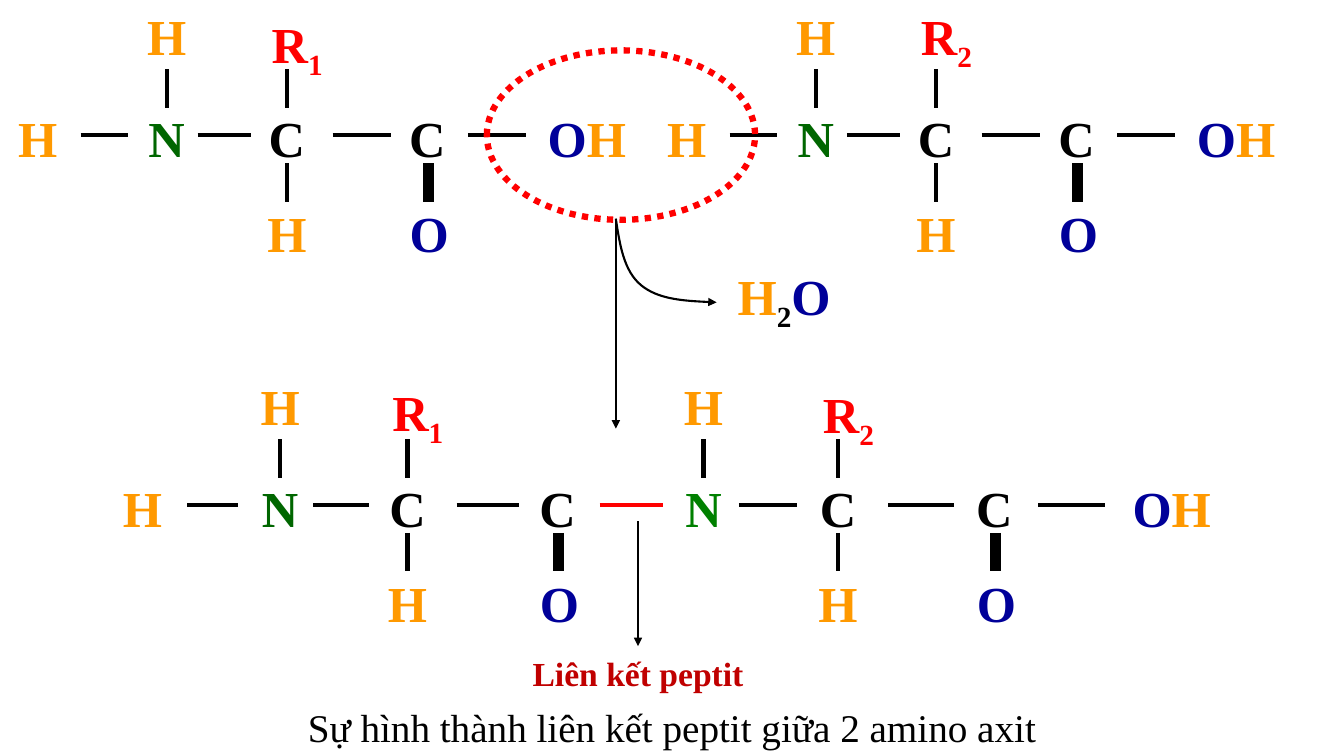
from lxml.etree import SubElement
from pptx import Presentation
from pptx.dml.color import RGBColor
from pptx.enum.dml import MSO_LINE
from pptx.enum.shapes import MSO_CONNECTOR, MSO_SHAPE
from pptx.enum.text import PP_ALIGN
from pptx.oxml.ns import qn
from pptx.util import Cm, Pt

COLORS = {
    "H": "FF9900", "N": "006600", "C": "000000", "O": "000099", "R": "FF0000",
    "peptide N": "008000", "black": "000000", "red": "FF0000", "label": "C00000",
}
FONT = "Times New Roman"
ATOM_WIDTH, ATOM_HEIGHT = 3, 1.78

# Heights below the top of a residue
BACKBONE, BRANCH = 2.57, 4.98
UPPER_BOND, LOWER_BOND, BACKBONE_BOND = (1.75, 2.72), (4.11, 5.08), 3.4


def add_text(slide, left, top, width, height, runs, size=36, bold=True, align=PP_ALIGN.CENTER):
    """Place one line of text; each run is (text, colour name, is subscript)."""
    box = slide.shapes.add_textbox(Cm(left), Cm(top), Cm(width), Cm(height))
    box.text_frame.word_wrap = True
    paragraph = box.text_frame.paragraphs[0]
    paragraph.alignment = align
    for text, color, subscript in runs:
        run = paragraph.add_run()
        run.text = text
        run.font.name = FONT
        run.font.size = Pt(size)
        run.font.bold = bold
        run.font.color.rgb = RGBColor.from_string(COLORS[color])
        if subscript:
            run.font._element.set("baseline", "-25000")


def add_atom(slide, center, top, symbols, color=None):
    runs = []
    for symbol in symbols:
        if symbol.isdigit():
            runs.append((symbol, "R", True))
        else:
            runs.append((symbol, color or symbol, False))
    add_text(slide, center - ATOM_WIDTH / 2, top, ATOM_WIDTH, ATOM_HEIGHT, runs)


def style_line(shape, color, width, arrow=False):
    shape.line.color.rgb = RGBColor.from_string(COLORS[color])
    shape.line.width = Pt(width)
    if arrow:
        SubElement(shape.line._get_or_add_ln(), qn("a:tailEnd"), type="triangle")


def add_line(slide, start, end, color="black", width=3, arrow=False):
    connector = slide.shapes.add_connector(
        MSO_CONNECTOR.STRAIGHT, Cm(start[0]), Cm(start[1]), Cm(end[0]), Cm(end[1]))
    style_line(connector, color, width, arrow)
    SubElement(connector._element.spPr, qn("a:effectLst"))


def add_residue(slide, left, top, nitrogen, alpha, carboxyl, bonds, side_chain, side_top,
                hydrogen=None, hydroxyl=None, nitrogen_color="N", last_bond_color="black"):
    """Draw one amino acid; atom centres and bonds are measured from its left edge."""
    atoms = [
        (nitrogen, 0, "H", None),
        (nitrogen, BACKBONE, "N", nitrogen_color),
        (alpha + 0.26, side_top, side_chain, None),
        (alpha, BACKBONE, "C", None),
        (alpha, BRANCH, "H", None),
        (carboxyl, BACKBONE, "C", None),
        (carboxyl + 0.05, BRANCH, "O", None),
    ]
    if hydrogen is not None:
        atoms.append((hydrogen, BACKBONE, "H", None))
    if hydroxyl is not None:
        atoms.append((hydroxyl, BACKBONE, "OH", None))
    for center, offset, symbols, color in atoms:
        add_atom(slide, left + center, top + offset, symbols, color)

    for center, (upper, lower), width in (
            (nitrogen, UPPER_BOND, 3), (alpha, UPPER_BOND, 3),
            (alpha, LOWER_BOND, 3), (carboxyl + 0.03, LOWER_BOND, 8)):
        add_line(slide, (left + center, top + upper), (left + center, top + lower), width=width)
    for start, end in bonds:
        color = last_bond_color if (start, end) == bonds[-1] else "black"
        add_line(slide, (left + start, top + BACKBONE_BOND),
                 (left + end, top + BACKBONE_BOND), color)


def add_curved_arrow(slide, left, top):
    """Draw two joined Bézier segments that end in an arrowhead."""
    points = [(0.1, 0.66), (0.2, 1.32), (0.64, 1.68), (1.07, 2.03), (1.8, 2.08), (2.54, 2.11)]
    builder = slide.shapes.build_freeform(Cm(left), Cm(top))
    builder.add_line_segments(
        [(Cm(left + x), Cm(top + y)) for x, y in points], close=False)
    curve = builder.convert_to_shape()
    curve.shadow.inherit = False
    curve.fill.background()
    style_line(curve, "black", 1.5, arrow=True)

    segments = list(curve._element.iter(qn("a:lnTo")))
    outline = segments[0].getparent()
    for first in range(0, len(segments), 3):
        bezier = SubElement(outline, qn("a:cubicBezTo"))
        for segment in segments[first:first + 3]:
            bezier.append(segment[0])
            outline.remove(segment)


def add_reactants(slide, left, top):
    amino_acid = dict(
        hydrogen=0.95, nitrogen=4.2, alpha=7.23, carboxyl=10.77, hydroxyl=14.79,
        bonds=[(2.03, 3.23), (4.98, 6.32), (8.38, 9.86), (11.79, 13.26)])
    add_residue(slide, left, top, side_chain="R1", side_top=0.2, **amino_acid)
    add_residue(slide, left + 16.36, top, side_chain="R2", side_top=0, **amino_acid)


def add_water_release(slide, left, top):
    ellipse = slide.shapes.add_shape(
        MSO_SHAPE.OVAL, Cm(left), Cm(top), Cm(6.76), Cm(4.27))
    ellipse.shadow.inherit = False
    ellipse.fill.background()
    style_line(ellipse, "red", 4.5)
    ellipse.line.dash_style = MSO_LINE.ROUND_DOT
    add_line(slide, (left + 3.25, top + 4.27), (left + 3.25, top + 9.53), width=1.5, arrow=True)
    add_curved_arrow(slide, left + 3.25, top + 4.24)
    add_text(slide, left + 6.07, top + 5.28, 4.52, 2.08,
             [("H", "H", False), ("2", "black", True), ("O", "O", False)],
             align=PP_ALIGN.LEFT)


def add_dipeptide(slide, left, top):
    add_residue(slide, left + 13, top, nitrogen=1.73, alpha=5.12, carboxyl=9.06, hydroxyl=13.53,
                bonds=[(2.62, 4.09), (6.38, 8.03), (10.16, 11.84)],
                side_chain="R2", side_top=0.2, nitrogen_color="peptide N")
    add_residue(slide, left, top, hydrogen=0.59, nitrogen=4.06, alpha=7.27, carboxyl=11.05,
                bonds=[(1.72, 2.99), (4.9, 6.3), (8.51, 10.08), (12.11, 13.71)],
                side_chain="R1", side_top=0.15, last_bond_color="red")
    add_text(slide, left + 8.1, top + 7.01, 9.96, 1.45,
             [("Liên kết peptit", "label", False)], size=24)
    add_line(slide, (left + 13.08, top + 3.81), (left + 13.08, top + 6.96), width=1, arrow=True)


def main():
    presentation = Presentation()
    presentation.slide_width = Cm(33.87)
    presentation.slide_height = Cm(19.05)
    slide = presentation.slides.add_slide(presentation.slide_layouts[6])
    add_reactants(slide, 0, 0)
    add_water_release(slide, 12.27, 1.27)
    add_dipeptide(slide, 3, 9.32)
    add_text(slide, 0, 17.6, 33.87, 1.45,
             [("Sự hình thành liên kết peptit giữa 2 amino axit", "black", False)],
             size=28, bold=False)
    presentation.save("out.pptx")


if __name__ == "__main__":
    main()
